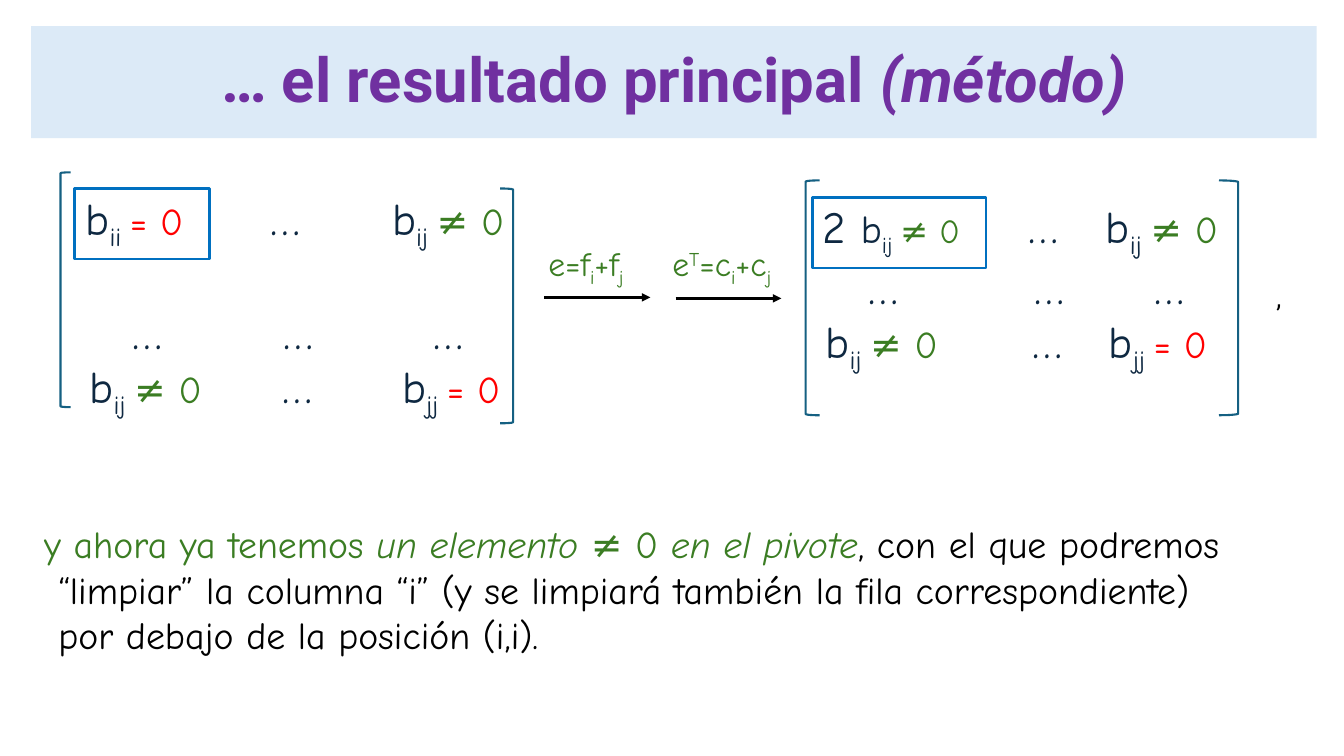
from dataclasses import dataclass

from lxml.etree import SubElement
from pptx import Presentation
from pptx.dml.color import RGBColor
from pptx.enum.shapes import MSO_CONNECTOR, MSO_SHAPE
from pptx.enum.text import MSO_ANCHOR, MSO_AUTO_SIZE, PP_ALIGN
from pptx.oxml.ns import qn
from pptx.util import Inches, Pt


@dataclass(frozen=True)
class Theme:
    heading: str = "Roboto"
    body: str = "Comic Neue"
    band: str = "DCEAF7"
    purple: str = "7030A0"
    navy: str = "0E2841"
    green: str = "3B7D23"
    red: str = "FF0000"
    blue: str = "0070C0"
    teal: str = "156082"
    black: str = "000000"
    title_size: int = 44
    entry_size: int = 32
    pivot_size: int = 28
    text_size: int = 27
    label_size: int = 24
    comma_size: int = 18


THEME = Theme()
SUBSCRIPT, SUPERSCRIPT = -25, 30


# Content: a span is (text, size, colour, baseline shift, italic)
def span_of(text, size=THEME.text_size, color=THEME.green, shift=0, italic=False):
    return text, size, color, shift, italic


def entry(index, relation, color):
    return [span_of("b", THEME.entry_size, THEME.navy),
            span_of(index + " ", THEME.entry_size, THEME.navy, SUBSCRIPT),
            span_of(relation, color=color)]


def label(*parts):
    return [span_of(text, THEME.label_size, shift=shift) for text, shift in parts]


DOTS = [span_of("…", THEME.entry_size, THEME.navy)]
NONZERO = entry("ij", "≠ 0", THEME.green)
ZERO_II = entry("ii", "= 0", THEME.red)
ZERO_JJ = entry("jj", "= 0", THEME.red)
PIVOT = [span_of("2 ", THEME.entry_size, THEME.navy),
         span_of("b", THEME.pivot_size, THEME.navy),
         span_of("ij ", THEME.pivot_size, THEME.navy, SUBSCRIPT),
         span_of("≠ 0", THEME.label_size)]

TITLE = [span_of("… el resultado principal ", THEME.title_size, THEME.purple),
         span_of("(método)", THEME.title_size, THEME.purple, italic=True)]

# Each row holds its entries and the column stops, in inches from the text edge
MATRICES = [
    dict(box=(0.66, 1.84, 4.62, 1.72), gap=38, pivot=(0.74, 1.87, 1.34, 0.7),
         brackets=[(0.6, 1.71, 0.1, 2.33), (4.96, 1.87, 0.13, 2.33)],
         rows=[([ZERO_II, DOTS, NONZERO], (0.09, 1.92, 3.13)),
               ([DOTS, DOTS, DOTS], (0.56, 2.05, 3.54)),
               ([NONZERO, DOTS, ZERO_JJ], (0.13, 2.04, 3.23))]),
    dict(box=(7.96, 1.92, 5.2, 1.72), gap=0, pivot=(8.06, 1.96, 1.72, 0.7),
         brackets=[(7.99, 1.79, 0.14, 2.33), (12.09, 1.79, 0.19, 2.33)],
         rows=[([PIVOT, DOTS, NONZERO], (0.1, 2.14, 2.91)),
               ([DOTS, DOTS, DOTS], (0.56, 2.2, 3.39)),
               ([NONZERO, DOTS, ZERO_JJ], (0.13, 2.18, 2.94))]),
]

STEPS = [
    dict(box=(5.34, 2.36, 1.3, 0.5), arrow=(5.4, 2.95),
         text=label(("e=f", 0), ("i", SUBSCRIPT), ("+f", 0), ("j", SUBSCRIPT))),
    dict(box=(6.57, 2.36, 1.48, 0.5), arrow=(6.7, 2.96),
         text=label(("e", 0), ("T", SUPERSCRIPT), ("=c", 0), ("i", SUBSCRIPT),
                    ("+c", 0), ("j", SUBSCRIPT))),
]
ARROW_LENGTH = 1.05

CONCLUSION = [
    (0.34, [span_of("y ahora ya tenemos "), span_of("un elemento ", italic=True),
            span_of("≠ 0 "), span_of("en el pivote", italic=True),
            span_of(", con el que podremos", color=THEME.black)]),
    (0.48, [span_of("“limpiar” la columna “i” (y se limpiará también la fila "
                    "correspondiente)", color=THEME.black)]),
    (0.48, [span_of("por debajo de la posición (i,i).", color=THEME.black)]),
]
COMMA = [span_of(",", THEME.comma_size, THEME.black)]

deck = Presentation()
deck.slide_width, deck.slide_height = Inches(13.33), Inches(7.5)
page = deck.slides.add_slide(deck.slide_layouts[6])


def add_outline(kind, place, line=None, width=0, fill=None):
    shape = page.shapes.add_shape(kind, *map(Inches, place))
    shape.shadow.inherit = False
    if fill:
        shape.fill.solid()
        shape.fill.fore_color.rgb = RGBColor.from_string(fill)
    else:
        shape.fill.background()
    if line:
        shape.line.color.rgb = RGBColor.from_string(line)
        shape.line.width = Pt(width)
    else:
        shape.line.fill.background()
    return shape


def add_frame(place):
    frame = page.shapes.add_textbox(*map(Inches, place)).text_frame
    frame.word_wrap = True
    frame.auto_size = MSO_AUTO_SIZE.SHAPE_TO_FIT_TEXT
    return frame


def next_paragraph(frame):
    first = frame.paragraphs[0]
    return frame.add_paragraph() if first.runs else first


def write(para, spans, font=THEME.body, lead=""):
    para.font.name = font
    for text, size, color, shift, italic in spans:
        span = para.add_run()
        span.text = lead + text
        lead = ""
        span.font.size = Pt(size)
        span.font.color.rgb = RGBColor.from_string(color)
        if italic:
            span.font.italic = True
        if shift:
            span.font._element.set("baseline", str(shift * 1000))


def set_stops(para, stops):
    properties = para._p.get_or_add_pPr()
    stop_list = SubElement(properties, qn("a:tabLst"))
    properties.insert(0, stop_list)
    for stop in stops:
        SubElement(stop_list, qn("a:tab"), pos=str(Inches(stop)), algn="l")


# Title band
band = add_outline(MSO_SHAPE.RECTANGLE, (0.31, 0.26, 12.75, 1.11), fill=THEME.band)
band.text_frame.word_wrap = True
band.text_frame.vertical_anchor = MSO_ANCHOR.MIDDLE
heading = band.text_frame.paragraphs[0]
write(heading, TITLE, THEME.heading)
heading.font.bold = True
heading.alignment = PP_ALIGN.CENTER
heading.line_spacing = 0.9

# Matrices with their pivots and brackets
for matrix in MATRICES:
    frame = add_frame(matrix["box"])
    for number, (entries, stops) in enumerate(matrix["rows"]):
        para = next_paragraph(frame)
        for spans in entries:
            write(para, spans, lead="\t")
        set_stops(para, stops)
        if number == 1 and matrix["gap"]:
            para.space_before = Pt(matrix["gap"])
    add_outline(MSO_SHAPE.RECTANGLE, matrix["pivot"], THEME.blue, 2)
    for kind, place in zip((MSO_SHAPE.LEFT_BRACKET, MSO_SHAPE.RIGHT_BRACKET),
                           matrix["brackets"]):
        add_outline(kind, place, THEME.teal, 1.5)

# Row and column operations
for step in STEPS:
    write(add_frame(step["box"]).paragraphs[0], step["text"])
    left, top = step["arrow"]
    arrow = page.shapes.add_connector(
        MSO_CONNECTOR.STRAIGHT, Inches(left), Inches(top),
        Inches(left + ARROW_LENGTH), Inches(top))
    arrow.line.color.rgb = RGBColor.from_string(THEME.black)
    arrow.line.width = Pt(2)
    SubElement(arrow.line._get_or_add_ln(), qn("a:tailEnd"), type="triangle")
    SubElement(arrow._element.spPr, qn("a:effectLst"))

# Conclusion and closing comma
frame = add_frame((0, 5.12, 13.33, 1.48))
for indent, spans in CONCLUSION:
    para = next_paragraph(frame)
    write(para, spans)
    para._p.get_or_add_pPr().set("marL", str(Inches(indent)))
write(add_frame((12.56, 2.75, 0.35, 0.4)).paragraphs[0], COMMA, THEME.heading)

deck.save("out.pptx")
